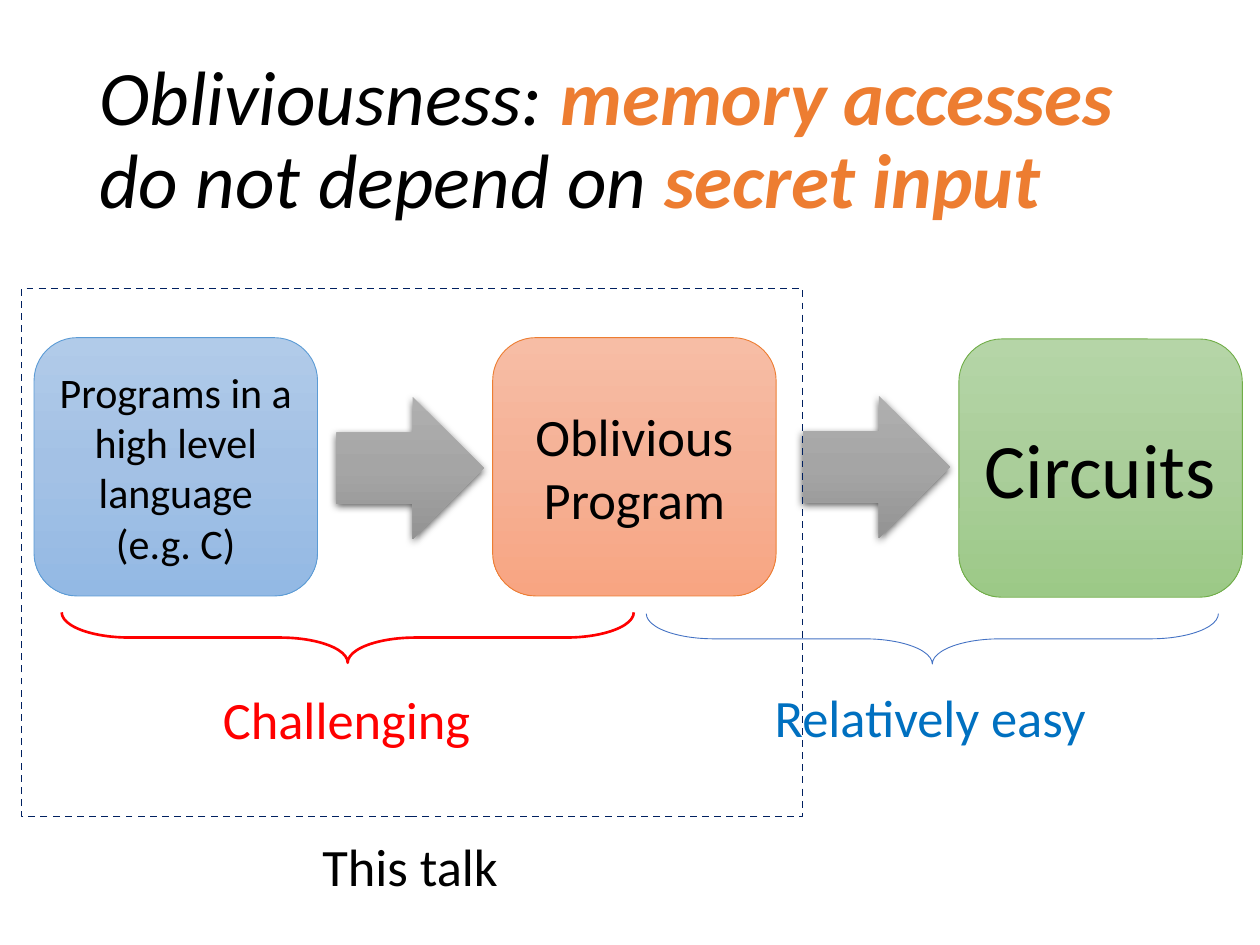
from pptx import Presentation
from pptx.dml.color import RGBColor
from pptx.enum.dml import MSO_LINE
from pptx.enum.shapes import MSO_SHAPE
from pptx.enum.text import MSO_ANCHOR, MSO_AUTO_SIZE, PP_ALIGN
from pptx.oxml import parse_xml
from pptx.oxml.ns import nsdecls
from pptx.util import Inches, Pt

BLACK = RGBColor(0x00, 0x00, 0x00)
ORANGE = RGBColor(0xED, 0x7D, 0x31)
GREEN = RGBColor(0x70, 0xAD, 0x47)
SKY = RGBColor(0x5B, 0x9B, 0xD5)
BLUE = RGBColor(0x44, 0x72, 0xC4)
AZURE = RGBColor(0x00, 0x70, 0xC0)
RED = RGBColor(0xFF, 0x00, 0x00)
NAVY = RGBColor(0x00, 0x20, 0x60)


def shades(*codes):
    return [RGBColor.from_string(code) for code in codes]


GRAYS = shades("AFAFAF", "A5A5A5", "939393")
BLUES = shades("B1CBE9", "A3C1E5", "93B9E4")
ORANGES = shades("F7BDA5", "F5B196", "F8A582")
GREENS = shades("B5D5A7", "AACE9A", "9CC987")


def write(frame, runs, size=30, align=PP_ALIGN.LEFT, anchor=MSO_ANCHOR.TOP,
          wrap=True, italic=False, spacing=None):
    """Fill a text frame with one paragraph of (text, colour, bold) runs."""
    frame.word_wrap = wrap
    frame.vertical_anchor = anchor
    if not wrap:
        frame.auto_size = MSO_AUTO_SIZE.SHAPE_TO_FIT_TEXT
    para = frame.paragraphs[0]
    para.alignment = align
    if spacing:
        para.line_spacing = spacing
    for text, color, bold in runs:
        run = para.add_run()
        run.text = text
        font = run.font
        font.name, font.size = "Calibri", Pt(size)
        font.bold, font.italic = bold, italic
        font.color.rgb = color


def add_form(slide, kind, box, line=None, width=0.5):
    form = slide.shapes.add_shape(kind, *map(Inches, box))
    form.shadow.inherit = False
    form.fill.background()
    if line is None:
        form.line.fill.background()
    else:
        form.line.color.rgb = line
        form.line.width = Pt(width)
    return form


def shade(form, colors):
    """Give a form an even vertical gradient."""
    form.fill.gradient()
    grad = form.element.spPr.gradFill
    stops = "".join(
        f'<a:gs pos="{i * 50000}"><a:srgbClr val="{color}"/></a:gs>'
        for i, color in enumerate(colors))
    grad.getparent().replace(grad, parse_xml(
        f'<a:gradFill {nsdecls("a")} rotWithShape="1"><a:gsLst>{stops}</a:gsLst>'
        '<a:lin ang="5400000" scaled="0"/></a:gradFill>'))


def add_stage(slide, left, top, text, size, colors, line):
    form = add_form(slide, MSO_SHAPE.ROUNDED_RECTANGLE, (left, top, 2.25, 2.05), line)
    shade(form, colors)
    write(form.text_frame, [(text, BLACK, False)], size=size,
          align=PP_ALIGN.CENTER, anchor=MSO_ANCHOR.MIDDLE)


def add_arrow(slide, left, top):
    form = add_form(slide, MSO_SHAPE.RIGHT_ARROW, (left, top, 1.17, 1.13))
    shade(form, GRAYS)
    effects = form.element.spPr.find(
        "{http://schemas.openxmlformats.org/drawingml/2006/main}effectLst")
    effects.append(parse_xml(
        f'<a:outerShdw {nsdecls("a")} blurRad="{Pt(4.5)}" dist="{Pt(1.5)}" '
        'dir="5400000" algn="ctr" rotWithShape="0"><a:srgbClr val="000000">'
        '<a:alpha val="63000"/></a:srgbClr></a:outerShdw>'))


def add_brace(slide, left, top, color, width):
    """Draw a brace that opens upward, from its unrotated corner."""
    form = add_form(slide, MSO_SHAPE.LEFT_BRACE, (left, top, 0.4, 4.54), color, width)
    form.rotation = 270
    form.adjustments[0] = 1.348
    form.adjustments[1] = 0.5


def add_label(slide, left, top, width, text, color):
    box = slide.shapes.add_textbox(*map(Inches, (left, top, width, 0.61)))
    write(box.text_frame, [(text, color, False)], wrap=False)


def add_scope(slide, left, top, width, height):
    """Frame the part covered by the talk, with its caption below."""
    frame = add_form(slide, MSO_SHAPE.RECTANGLE, (left, top, width, height), NAVY, 1)
    frame.line.dash_style = MSO_LINE.DASH
    add_label(slide, left + 2.29, top + height + 0.09, 1.61, "This talk", BLACK)


def add_flow(slide, left, top):
    add_arrow(slide, left + 2.4, top + 0.47)
    add_stage(slide, left, top, "Programs in a high level language (e.g. C)",
              24, BLUES, SKY)
    add_stage(slide, left + 3.64, top, "Oblivious Program", 30, ORANGES, ORANGE)
    add_arrow(slide, left + 6.1, top + 0.46)
    add_stage(slide, left + 7.34, top + 0.01, "Circuits", 44, GREENS, GREEN)


def add_notes(slide, left, top):
    """Mark how hard each step is, with a brace and a label."""
    add_brace(slide, left + 4.64, top + 0.01, BLUE, 0.5)
    add_label(slide, left + 3.49, top + 2.6, 2.79, "Relatively easy", AZURE)
    add_brace(slide, left, top, RED, 1.5)
    add_label(slide, left - 0.89, top + 2.61, 2.18, "Challenging", RED)


def add_title(slide, left, top, width, height):
    box = slide.shapes.add_textbox(*map(Inches, (left, top, width, height)))
    write(box.text_frame, [
        ("Obliviousness: ", BLACK, False),
        ("memory accesses ", ORANGE, True),
        ("do not depend on ", BLACK, False),
        ("secret input", ORANGE, True),
    ], size=44, anchor=MSO_ANCHOR.MIDDLE, italic=True, spacing=0.9)


def main():
    deck = Presentation()
    deck.slide_width, deck.slide_height = Inches(10), Inches(7.5)
    slide = deck.slides.add_slide(deck.slide_layouts[6])
    add_flow(slide, 0.27, 2.68)
    add_notes(slide, 2.56, 2.79)
    add_scope(slide, 0.17, 2.29, 6.2, 4.19)
    add_title(slide, 0.69, 0.4, 8.62, 1.45)
    deck.save("out.pptx")


if __name__ == "__main__":
    main()
